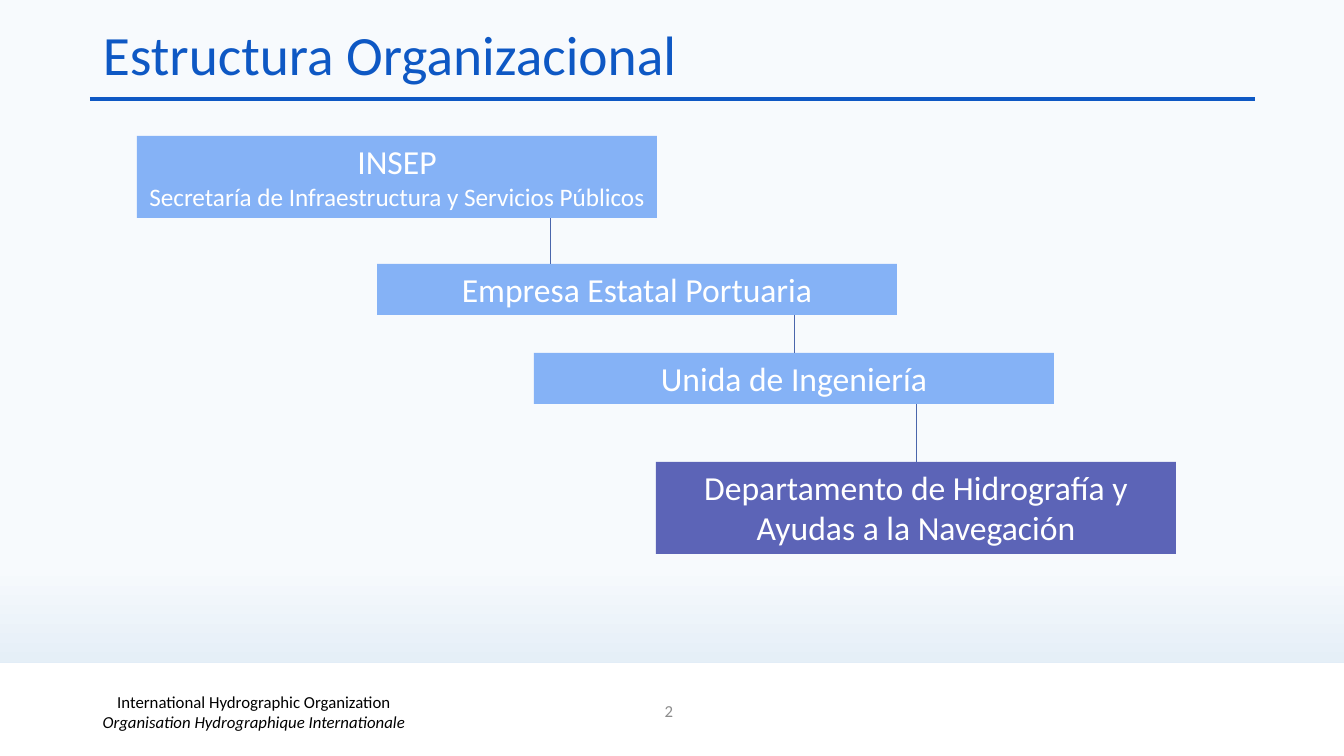
from pptx import Presentation
from pptx.dml.color import RGBColor
from pptx.enum.shapes import MSO_CONNECTOR, MSO_SHAPE
from pptx.enum.text import MSO_ANCHOR, PP_ALIGN
from pptx.oxml.ns import qn
from pptx.util import Pt
from lxml import etree

RECTANGLE = MSO_SHAPE.RECTANGLE
STRAIGHT = MSO_CONNECTOR.STRAIGHT
MIDDLE, TOP = MSO_ANCHOR.MIDDLE, MSO_ANCHOR.TOP
LEFT, CENTER = PP_ALIGN.LEFT, PP_ALIGN.CENTER

PAGE_WIDTH, PAGE_HEIGHT = 1344, 756
EMU_PER_PX = 914400 / 100.8
FONT = "Calibri"
COLORS = {
    "sky": "F7FAFD", "haze": "D0E2F1", "title": "0E58C4",
    "white": "FFFFFF", "black": "000000", "gray": "8C8C8C",
    "unit": "85B2F6", "department": "5C64B7", "link": "4A66AC",
}
UNIT_WIDTH = 520


def px(length):
    return round(length * EMU_PER_PX)


def color(name):
    return RGBColor.from_string(COLORS[name])


def write(shape, lines, font_color, align=CENTER, anchor=MIDDLE):
    """Each line is a tuple of text, size and italic."""
    frame = shape.text_frame
    frame.word_wrap = True
    frame.vertical_anchor = anchor
    frame.text = "\n".join(text for text, size, italic in lines)
    for para, (text, size, italic) in zip(frame.paragraphs, lines):
        para.alignment = align
        font = para.runs[0].font
        font.name, font.size, font.italic = FONT, Pt(size), italic
        font.color.rgb = color(font_color)


def add_text(page, box, lines, font_color, align=CENTER):
    shape = page.shapes.add_textbox(*map(px, box))
    write(shape, lines, font_color, align)
    return shape


def add_block(page, box, fill):
    shape = page.shapes.add_shape(RECTANGLE, *map(px, box))
    shape.shadow.inherit = False
    shape.fill.solid()
    shape.fill.fore_color.rgb = color(fill)
    shape.line.fill.background()
    return shape


def add_line(page, start, end, line_color, width):
    line = page.shapes.add_connector(STRAIGHT, *map(px, start + end))
    line.line.color.rgb = color(line_color)
    line.line.width = Pt(width)
    etree.SubElement(line._element.spPr, qn("a:effectLst"))


def paint_background(page):
    fill = page.background.fill
    fill.gradient()
    fill.gradient_angle = 270
    for stop, (position, name) in zip(fill.gradient_stops, [(0.75, "sky"), (1, "haze")]):
        stop.position = position
        stop.color.rgb = color(name)


def add_header(page, box):
    left, top, width, height = box
    title = add_text(page, (left + 3, top, width - 6, 59),
                     [("Estructura Organizacional", 39.6, False)], "title", LEFT)
    title.text_frame.paragraphs[0].line_spacing = 0.9
    bottom = top + height
    add_line(page, (left, bottom), (left + width, bottom), "title", 2.25)


def add_footer(page, box):
    left, top, width, height = box
    add_block(page, box, "white")
    add_text(page, (left + 27, top + 29, 454, 40),
             [("International Hydrographic Organization", 12, False),
              ("Organisation Hydrographique Internationale", 12, True)], "black")
    add_text(page, (left + 518, top + 28, 302, 40), [("2", 12, False)], "gray")


def add_organization(page, box):
    left, top, width, height = box
    # Offset, height, fill, x of the link from the unit above, and text
    units = [
        (0, 0, 82, "unit", None,
         [("INSEP", 24, False),
          ("Secretaría de Infraestructura y Servicios Públicos", 18, False)]),
        (240, 128, 51, "unit", 413, [("Empresa Estatal Portuaria", 24, False)]),
        (397, 217, 51, "unit", 657, [("Unida de Ingeniería", 24, False)]),
        (519, 326, 92, "department", 779,
         [("Departamento de Hidrografía y Ayudas a la Navegación", 24, False)]),
    ]
    above = top
    for x, y, unit_height, fill, link_x, lines in units:
        unit = add_block(page, (left + x, top + y, UNIT_WIDTH, unit_height), fill)
        write(unit, lines, "white", anchor=TOP)
        if link_x is not None:
            add_line(page, (left + link_x, above), (left + link_x, top + y), "link", 0.5)
        above = top + y + unit_height


def main():
    deck = Presentation()
    deck.slide_width, deck.slide_height = px(PAGE_WIDTH), px(PAGE_HEIGHT)
    page = deck.slides.add_slide(deck.slide_layouts[6])
    paint_background(page)
    add_header(page, (90, 28, 1165, 71))
    add_footer(page, (0, 663, PAGE_WIDTH, 93))
    add_organization(page, (137, 136, 1039, 418))
    deck.save("out.pptx")


if __name__ == "__main__":
    main()
